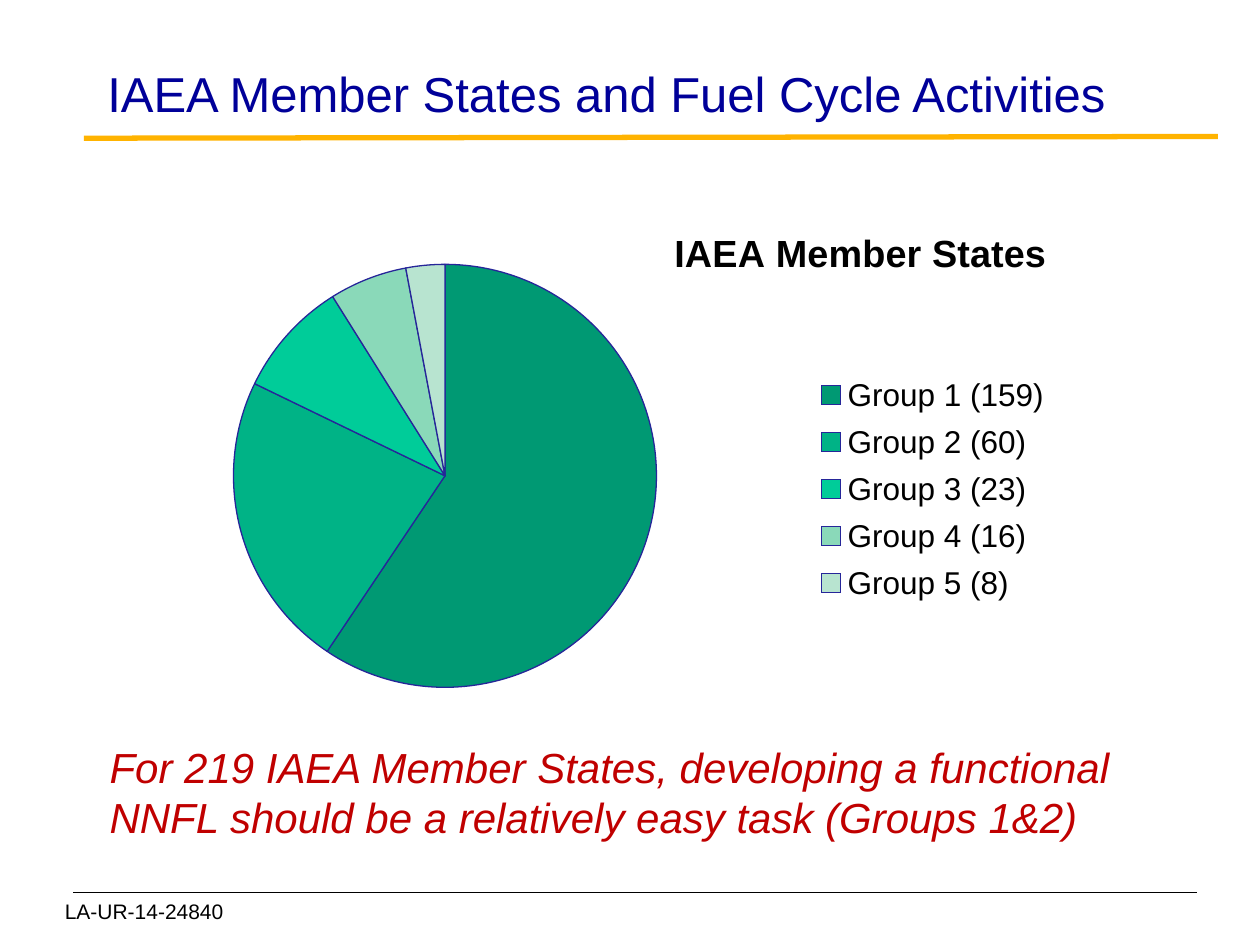
from pptx import Presentation
from pptx.chart.data import CategoryChartData as Data
from pptx.dml.color import RGBColor as Rgb
from pptx.enum.chart import XL_CHART_TYPE as Kind, XL_LEGEND_POSITION as Side
from pptx.enum.text import MSO_ANCHOR as Anchor, PP_ALIGN as Align
from pptx.oxml import parse_xml
from pptx.oxml.ns import nsdecls, qn
from pptx.util import Pt

BLACK = Rgb(0x00, 0x00, 0x00)
NAVY = Rgb(0x00, 0x00, 0x99)
EDGE = Rgb(0x26, 0x26, 0x99)
GOLD = Rgb(0xFF, 0xB3, 0x00)
RED = Rgb(0xC0, 0x00, 0x00)
GREENS = [
    Rgb(0x00, 0x99, 0x73),
    Rgb(0x00, 0xB3, 0x86),
    Rgb(0x00, 0xCC, 0x99),
    Rgb(0x8A, 0xD9, 0xB9),
    Rgb(0xB8, 0xE4, 0xD0),
]
GROUPS = [
    ("Group 1 (159)", 60),
    ("Group 2 (60)", 23),
    ("Group 3 (23)", 9),
    ("Group 4 (16)", 6),
    ("Group 5 (8)", 3),
]


def style(font, size, color, bold=False, italic=False):
    font.name = "Arial"
    font.size = Pt(size)
    font.color.rgb = color
    font.bold = bold
    font.italic = italic


def write(frame, text, size, color, italic=False):
    run = frame.paragraphs[0].add_run()
    run.text = text
    style(run.font, size, color, italic=italic)


def place(shape, box):
    shape.left, shape.top, shape.width, shape.height = map(Pt, box)


def rule(slide, start, end, color, width):
    line = slide.shapes.add_connector(1, *map(Pt, start + end))
    line.line.color.rgb = color
    line.line.width = Pt(width)
    line._element.spPr.append(parse_xml(f"<a:effectLst {nsdecls('a')}/>"))


def head(slide, box):
    title = slide.shapes.title
    place(title, box)
    frame = title.text_frame
    frame.word_wrap = True
    frame.vertical_anchor = Anchor.TOP
    frame.margin_top = Pt(6)
    frame.paragraphs[0].alignment = Align.CENTER
    write(frame, "IAEA Member States and Fuel Cycle Activities", 28, NAVY)
    left, top, width, high = box
    rule(slide, (left + 15, top + 49), (left + 663, top + 48), GOLD, 3)


def note(slide, box, text, size, color, italic=False):
    frame = slide.shapes.add_textbox(*map(Pt, box)).text_frame
    frame.word_wrap = True
    write(frame, text, size, color, italic)


def foot(slide, box):
    left, top, width, high = box
    rule(slide, (left + 12, top), (left + 654, top), BLACK, 0.75)
    note(slide, box, "LA-UR-14-24840", 12, BLACK)


def layout(x, y, w=None, h=None, inner=False):
    tags = '<c:layoutTarget val="inner"/>' if inner else ""
    tags += '<c:xMode val="edge"/><c:yMode val="edge"/>'
    for name, val in (("x", x), ("y", y), ("w", w), ("h", h)):
        if val is not None:
            tags += f'<c:{name} val="{val}"/>'
    return parse_xml(
        f"<c:layout {nsdecls('c')}><c:manualLayout>{tags}</c:manualLayout></c:layout>"
    )


def fix(part, before, spot):
    for old in part.findall(qn("c:layout")):
        part.remove(old)
    if before is None:
        part.insert(0, spot)
    else:
        part.find(qn(before)).addnext(spot)


def pie(slide, box):
    data = Data()
    data.categories = [name for name, val in GROUPS]
    data.add_series("IAEA Member States", [val for name, val in GROUPS])
    chart = slide.shapes.add_chart(Kind.PIE, *map(Pt, box), data).chart
    style(chart.font, 18, BLACK)

    chart.has_title = True
    run = chart.chart_title.text_frame.paragraphs[0].add_run()
    run.text = "IAEA Member States"
    style(run.font, 21.6, BLACK, bold=True)
    chart.chart_title.include_in_layout = False

    chart.has_legend = True
    chart.legend.position = Side.RIGHT
    chart.legend.include_in_layout = False
    style(chart.legend.font, 18, BLACK)

    plot = chart.plots[0]
    plot.vary_by_categories = True
    for i, color in enumerate(GREENS):
        look = plot.series[0].points[i].format
        look.fill.solid()
        look.fill.fore_color.rgb = color
        look.line.color.rgb = EDGE
        look.line.width = Pt(0.75)

    root = chart._chartSpace.chart
    fix(root.find(qn("c:title")), "c:tx", layout(0.59, 0.1))
    fix(root.plotArea, None, layout(0.18, 0.18, 0.4, 0.79, inner=True))
    fix(chart.legend._element, "c:legendPos", layout(0.72, 0.37, 0.24, 0.46))


def main():
    deck = Presentation()
    deck.slide_width, deck.slide_height = Pt(720), Pt(540)
    slide = deck.slides.add_slide(deck.slide_layouts[5])
    foot(slide, (30, 510, 144, 36))
    head(slide, (33, 30, 627, 54))
    pie(slide, (24, 96, 606, 306))
    claim = (
        "For 219 IAEA Member States, developing a functional NNFL "
        "should be a relatively easy task (Groups 1&2)"
    )
    note(slide, (55.5, 420, 636, 65.5), claim, 24, RED, italic=True)
    deck.save("out.pptx")


if __name__ == "__main__":
    main()
